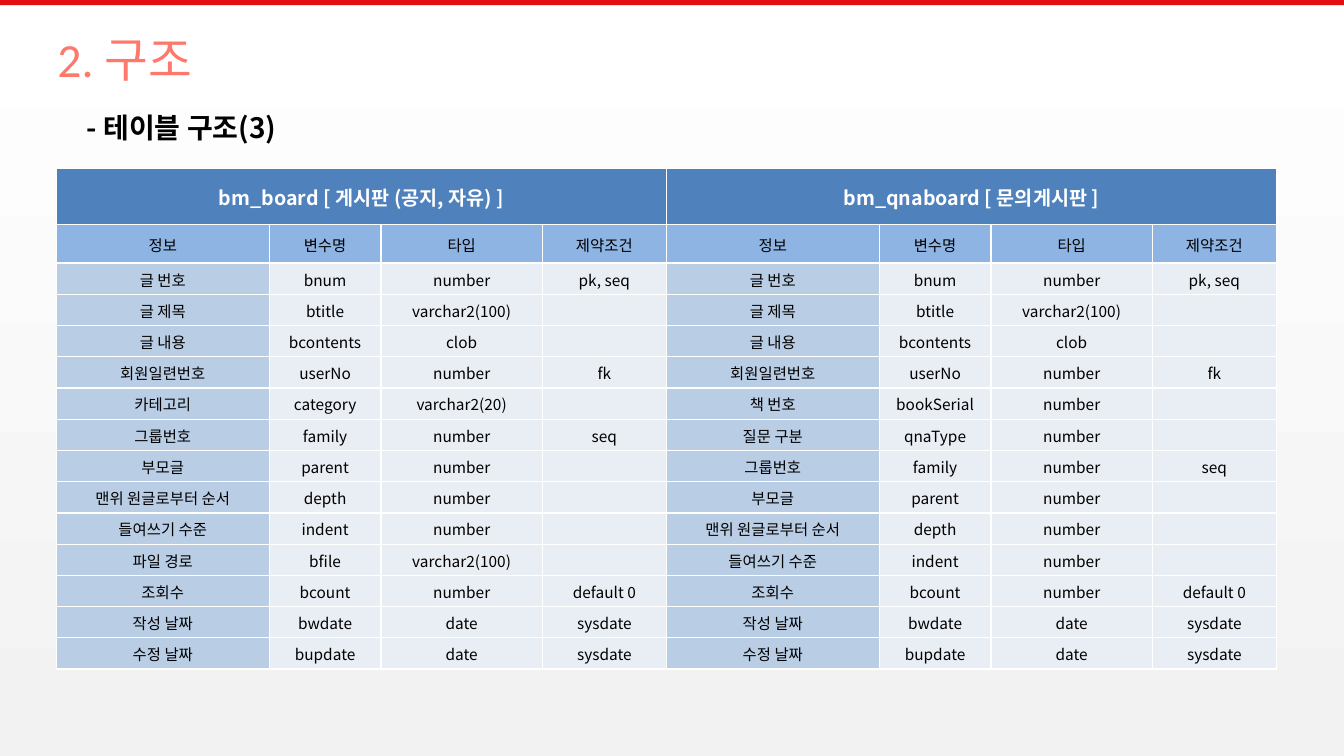
"""Build the slide that sets out two board tables side by side."""
from lxml.etree import SubElement
from pptx import Presentation
from pptx.dml.color import RGBColor
from pptx.enum.shapes import MSO_SHAPE
from pptx.enum.text import MSO_ANCHOR, PP_ALIGN
from pptx.oxml.ns import qn
from pptx.util import Inches, Pt

TITLE = "2. 구조"
SUBTITLE = "- 테이블 구조(3)"
HEADINGS = ("정보", "변수명", "타입", "제약조건")
POST = [
    ("글 번호", "bnum", "number", "pk, seq"),
    ("글 제목", "btitle", "varchar2(100)", ""),
    ("글 내용", "bcontents", "clob", ""),
    ("회원일련번호", "userNo", "number", "fk"),
]
THREAD = [
    ("그룹번호", "family", "number", "seq"),
    ("부모글", "parent", "number", ""),
    ("맨위 원글로부터 순서", "depth", "number", ""),
    ("들여쓰기 수준", "indent", "number", ""),
]
HISTORY = [
    ("조회수", "bcount", "number", "default 0"),
    ("작성 날짜", "bwdate", "date", "sysdate"),
    ("수정 날짜", "bupdate", "date", "sysdate"),
]
CATEGORY = [("카테고리", "category", "varchar2(20)", "")]
FILE = [("파일 경로", "bfile", "varchar2(100)", "")]
QUESTION = [
    ("책 번호", "bookSerial", "number", ""),
    ("질문 구분", "qnaType", "number", ""),
]
BOARDS = [
    ("bm_board [ 게시판 (공지, 자유) ]", POST + CATEGORY + THREAD + FILE + HISTORY),
    ("bm_qnaboard [ 문의게시판 ]", POST + QUESTION + THREAD + HISTORY),
]
COLORS = {
    "top": "FFFFFF", "bottom": "F2F2F2", "bar": "E10D10", "title": "FE786B",
    "name": "4F81BD", "heading": "8EB4E3", "label": "B9CDE5", "value": "E9EDF4",
    "white": "FFFFFF", "black": "000000",
}
FONT = "Noto Sans CJK KR"
WIDTH, HEIGHT = 13.33, 7.5
COLUMNS = (2.11, 1.11, 1.6, 1.23)
NAME_ROW, HEADING_ROW, FIELD_ROW = 0.56, 0.38, 0.31
TABLE_LEFT, TABLE_TOP = 0.56, 1.67


def color(name):
    return RGBColor.from_string(COLORS[name])


def style(para, size, ink, bold=False, name=FONT):
    font = para.font
    font.size, font.bold, font.name = Pt(size), bold, name
    font.color.rgb = color(ink)
    if name == FONT:
        SubElement(font._element, qn("a:ea"), typeface=FONT)


def fill_cell(cell, text, fill, size=11, ink="black", bold=False):
    cell.fill.solid()
    cell.fill.fore_color.rgb = color(fill)
    cell.vertical_anchor = MSO_ANCHOR.MIDDLE
    cell.margin_left = cell.margin_right = cell.margin_top = Inches(0.01)
    cell.margin_bottom = 0
    cell.text = text
    para = cell.text_frame.paragraphs[0]
    para.alignment = PP_ALIGN.CENTER
    style(para, size, ink, bold)
    if not text:
        SubElement(para._p, qn("a:endParaRPr"), sz=str(size * 100))


def add_board(page, left, name, fields):
    heights = [NAME_ROW, HEADING_ROW] + [FIELD_ROW] * len(fields)
    table = page.shapes.add_table(
        len(heights), len(COLUMNS), Inches(left), Inches(TABLE_TOP),
        Inches(sum(COLUMNS)), Inches(sum(heights))).table
    table.horz_banding = False
    for column, width in zip(table.columns, COLUMNS):
        column.width = Inches(width)
    for row, height in zip(table.rows, heights):
        row.height = Inches(height)
    table.cell(0, 0).merge(table.cell(0, len(COLUMNS) - 1))
    fill_cell(table.cell(0, 0), name, "name", 14, "white", True)
    for r, texts in enumerate([HEADINGS] + fields, 1):
        for c, text in enumerate(texts):
            fill = "heading" if r == 1 else "label" if c == 0 else "value"
            fill_cell(table.cell(r, c), text, fill)


def main():
    deck = Presentation()
    deck.slide_width, deck.slide_height = Inches(WIDTH), Inches(HEIGHT)
    page = deck.slides.add_slide(deck.slide_layouts[5])

    backdrop = page.background.fill
    backdrop.gradient()
    backdrop.gradient_angle = 270
    for stop, name in zip(backdrop.gradient_stops, ("top", "bottom")):
        stop.color.rgb = color(name)

    bar = page.shapes.add_shape(MSO_SHAPE.RECTANGLE, 0, 0, deck.slide_width, Inches(0.05))
    bar.shadow.inherit = False
    bar.fill.solid()
    bar.fill.fore_color.rgb = color("bar")
    bar.line.fill.background()

    for index, (name, fields) in enumerate(BOARDS):
        add_board(page, TABLE_LEFT + index * sum(COLUMNS), name, fields)

    title = page.shapes.title
    title.left, title.top, title.width, title.height = map(Inches, (0.47, 0.2, 11.5, 0.71))
    title.text = TITLE
    title.text_frame.vertical_anchor = MSO_ANCHOR.BOTTOM
    heading = title.text_frame.paragraphs[0]
    heading.alignment = PP_ALIGN.LEFT
    style(heading, 34, "title", name="Calibri")

    box = page.shapes.add_textbox(*map(Inches, (0.76, 1.05, 9.15, 0.44)))
    box.text_frame.word_wrap = True
    box.text_frame.text = SUBTITLE
    style(box.text_frame.paragraphs[0], 20, "black", True)

    deck.save("out.pptx")


if __name__ == "__main__":
    main()
